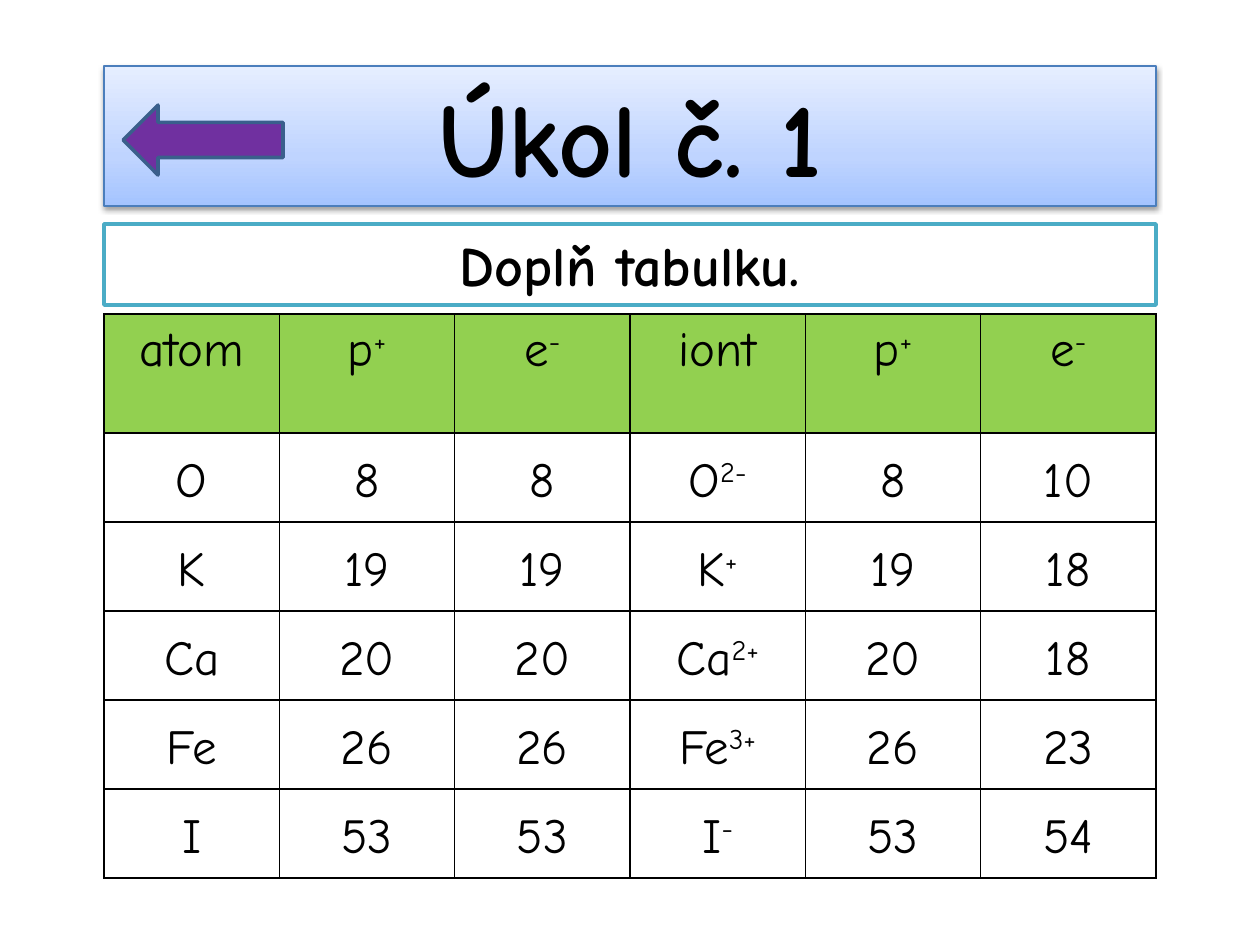
from lxml import etree
from copy import deepcopy
from pptx import Presentation
from pptx import util as u
from pptx.dml.color import RGBColor
from pptx.enum import shapes, text
from pptx.oxml import parse_xml
from pptx.oxml.ns import nsdecls, qn

BLACK = RGBColor(0x00, 0x00, 0x00)
WHITE = RGBColor(0xFF, 0xFF, 0xFF)
GREEN = RGBColor(0x92, 0xD0, 0x50)
PURPLE = RGBColor(0x70, 0x30, 0xA0)
NAVY = RGBColor(0x3A, 0x5F, 0x8C)
TEAL = RGBColor(0x4B, 0xAC, 0xC6)
BLUE = RGBColor(0x4B, 0x7E, 0xBC)
BANNER_STOPS = [
    (0, RGBColor(0xA4, 0xC4, 0xFF)),
    (0.35, RGBColor(0xBF, 0xD4, 0xFF)),
    (1, RGBColor(0xE6, 0xEE, 0xFF)),
]

LEFT, WIDTH = 104, 1052

# A caret separates the base symbol from its superscript charge
ROWS = [
    ["atom", "p^+", "e^-", "iont", "p^+", "e^-"],
    ["O", "8", "8", "O^2-", "8", "10"],
    ["K", "19", "19", "K^+", "19", "18"],
    ["Ca", "20", "20", "Ca^2+", "20", "18"],
    ["Fe", "26", "26", "Fe^3+", "26", "23"],
    ["I", "53", "53", "I^-", "53", "54"],
]


def px(n):
    return u.Emu(round(n * 914400 / 126))


def apply(obj, values):
    for name, value in values.items():
        setattr(obj, name, value)


class Deck:
    font = "Comic Neue"

    def __init__(self, prs):
        self.s = prs.slides.add_slide(prs.slide_layouts[6])

    def add_text(self, p, content, size, bold=False):
        p.alignment = text.PP_ALIGN.CENTER
        for i, part in enumerate(content.split("^")):
            r = p.add_run()
            r.text = part
            apply(r.font, {"name": self.font, "size": u.Pt(size), "bold": bold})
            r.font.color.rgb = BLACK
            if i:
                r.font._element.set("baseline", "30000")

    def shape(self, kind, box, fill, line, weight):
        sp = self.s.shapes.add_shape(kind, *map(px, box))
        sp.shadow.inherit = False
        if isinstance(fill, list):
            self.gradient(sp, fill)
        else:
            sp.fill.solid()
            sp.fill.fore_color.rgb = fill
        sp.line.color.rgb = line
        sp.line.width = u.Pt(weight)
        return sp

    def gradient(self, sp, stops):
        sp.fill.gradient()
        sp.fill.gradient_angle = 90
        gs = sp._element.spPr.find(".//" + qn("a:gsLst"))
        while len(gs) < len(stops):
            gs.append(deepcopy(gs[0]))
        for stop, (position, color) in zip(sp.fill.gradient_stops, stops):
            stop.position = position
            stop.color.rgb = color

    def label(self, box, content, size, fill, line, weight):
        sp = self.shape(shapes.MSO_SHAPE.RECTANGLE, box, fill, line, weight)
        tf = sp.text_frame
        apply(tf, {
            "word_wrap": True,
            "auto_size": text.MSO_AUTO_SIZE.SHAPE_TO_FIT_TEXT,
            "vertical_anchor": text.MSO_ANCHOR.TOP,
        })
        self.add_text(tf.paragraphs[0], content, size, bold=True)
        return sp

    def drop_shadow(self, sp):
        effects = sp._element.spPr.find(qn("a:effectLst"))
        effects.append(parse_xml(
            f'<a:outerShdw {nsdecls("a")} blurRad="{u.Pt(3.1)}" dist="{u.Pt(1.6)}" '
            'dir="5400000" rotWithShape="0"><a:srgbClr val="000000">'
            '<a:alpha val="38000"/></a:srgbClr></a:outerShdw>'))

    def borders(self, cell):
        tc_pr = cell._tc.get_or_add_tcPr()
        for side in ("lnL", "lnR", "lnT", "lnB"):
            ln = etree.SubElement(tc_pr, qn("a:" + side), w=str(u.Pt(1)))
            fill = etree.SubElement(ln, qn("a:solidFill"))
            etree.SubElement(fill, qn("a:srgbClr"), val=str(BLACK))

    def table(self, box, rows, heights, size):
        frame = self.s.shapes.add_table(len(rows), len(rows[0]), *map(px, box))
        table = frame.table
        apply(table, {"first_row": False, "horz_banding": False})
        for col in table.columns:
            col.width = px(box[2] / len(rows[0]))
        for i, (row, height) in enumerate(zip(rows, heights)):
            table.rows[i].height = px(height)
            for j, content in enumerate(row):
                cell = table.cell(i, j)
                apply(cell, {
                    "margin_left": px(9), "margin_right": px(9),
                    "margin_top": 0, "margin_bottom": 0,
                    "vertical_anchor": text.MSO_ANCHOR.MIDDLE if i else text.MSO_ANCHOR.TOP,
                })
                self.borders(cell)
                if i:
                    cell.fill.background()
                else:
                    cell.fill.solid()
                    cell.fill.fore_color.rgb = GREEN
                p = cell.text_frame.paragraphs[0]
                p.line_spacing = 1.15
                self.add_text(p, content, size)


def main():
    prs = Presentation()
    apply(prs, {"slide_width": px(1260), "slide_height": px(945)})
    deck = Deck(prs)

    # Table of atoms and ions
    heights = [119] + [89] * 5
    deck.table((LEFT, 314, WIDTH, sum(heights)), ROWS, heights, 28)

    # Title banner and instruction
    banner = deck.label((LEFT, 66, WIDTH, 140), "Úkol č. 1", 60, BANNER_STOPS, BLUE, 0.75)
    deck.drop_shadow(banner)
    deck.label((LEFT, 224, WIDTH, 81), "Doplň tabulku.", 32, WHITE, TEAL, 2)

    # Back arrow
    deck.shape(shapes.MSO_SHAPE.LEFT_ARROW, (123, 105, 160, 70), PURPLE, NAVY, 2)

    prs.save("out.pptx")


if __name__ == "__main__":
    main()
